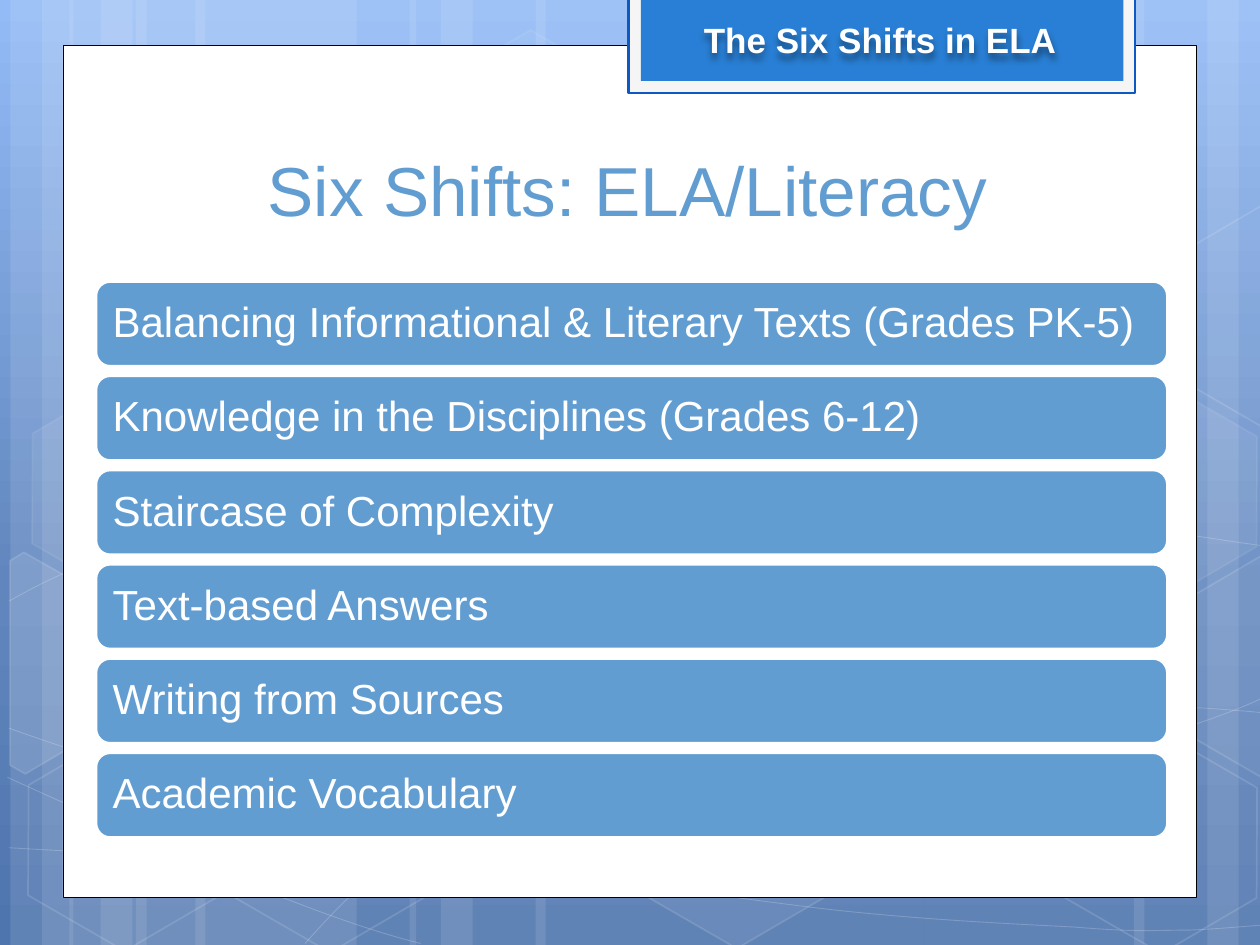
from copy import deepcopy
from dataclasses import dataclass
from math import cos, radians, sin
from typing import NamedTuple, Optional

from pptx import Presentation
from pptx.dml.color import RGBColor as Rgb
from pptx.enum.shapes import MSO_SHAPE as Preset
from pptx.enum.text import MSO_ANCHOR as Anchor, PP_ALIGN as Align
from pptx.oxml import parse_xml
from pptx.oxml.ns import nsdecls, qn
from pptx.util import Cm, Pt


@dataclass(frozen=True)
class Theme:
    font: str = "Arial"
    white: str = "FFFFFF"
    black: str = "000000"
    accent: str = "629DD1"
    tab_border: str = "0E58C4"
    tab_frame: str = "F5F5F5"
    tab: str = "297FD5"
    sky: tuple = ((0, "93BBF6"), (0.62, "6186BE"), (1, "4F75AE"))
    title_size: float = 39.6
    row_size: float = 24
    tab_size: float = 20


class Box(NamedTuple):
    left: float
    top: float
    width: float
    height: float


class Paint(NamedTuple):
    fill: Optional[str] = None
    fill_alpha: int = 100
    line: Optional[str] = None
    line_width: float = 1
    line_alpha: int = 100


class Stripe(NamedTuple):
    left: float
    width: float


class Hexagon(NamedTuple):
    left: float
    top: float
    fill_alpha: int
    line_alpha: int


class Polygon(NamedTuple):
    center: tuple
    points: list
    fill_alpha: int


THEME = Theme()
PAGE_WIDTH, PAGE_HEIGHT = 25.4, 19.05
HEXAGON_WIDTH, HEXAGON_HEIGHT = 4.45, 3.86
TILT = 30
ROW_TOP, ROW_PITCH = 5.68, 1.9

WIDE, NARROW, MEDIUM = 4.45, 1.27, 2.11
STRIPES = [
    Stripe(2.74, WIDE), Stripe(0.21, NARROW), Stripe(0.85, MEDIUM),
    Stripe(3.94, WIDE), Stripe(1.4, NARROW), Stripe(2.03, MEDIUM),
    Stripe(18.62, WIDE), Stripe(24.34, NARROW), Stripe(22.86, MEDIUM),
    Stripe(10.8, 7.82), Stripe(8.26, NARROW), Stripe(8.89, MEDIUM),
]
CURVES = [
    [(0.18, 17.09), (1.55, 17.17), (2.92, 17.25), (4.83, 17.22), (6.73, 17.2),
     (9.09, 17.15), (11.63, 16.89), (14.17, 16.64), (17.78, 16.15), (20.12, 15.67),
     (22.43, 15.19), (24.82, 14.43), (25.58, 14)],
    [(0.18, 12.12), (0.91, 11.71), (1.65, 11.33), (3.07, 10.95), (4.52, 10.57),
     (6.58, 10.01), (8.81, 9.83), (11.07, 9.65), (13.82, 9.63), (16.61, 9.83),
     (19.41, 10.03), (24.05, 10.82), (25.58, 11.02)],
    [(0.15, 15.67), (3.23, 17.07), (6.27, 18.47), (8.48, 19.02)],
    [(0.18, 14.68), (0.97, 14.96), (1.78, 15.24), (3.25, 15.65), (4.72, 16.03),
     (6.93, 16.66), (9.07, 17.09), (11.18, 17.53), (13.84, 17.98), (15.95, 18.24),
     (18.06, 18.52), (20.32, 18.62), (21.67, 18.69), (22.99, 18.8), (23.34, 18.75),
     (24, 18.75), (24.66, 18.72), (25.12, 18.67), (25.58, 18.64)],
    [(6.15, 19.02), (6.6, 18.52), (7.06, 18.01), (7.67, 17.55), (8.28, 17.09),
     (9.14, 16.59), (9.86, 16.23), (10.57, 15.88), (11, 15.72), (11.94, 15.47),
     (12.85, 15.21), (14.55, 14.86), (15.44, 14.68), (16.36, 14.5), (16.48, 14.5),
     (17.27, 14.45), (18.06, 14.38), (19.3, 14.3), (20.17, 14.27), (21.06, 14.25),
     (22.5, 14.27), (22.5, 14.27), (22.5, 14.27), (24.21, 14.27), (24.21, 14.27),
     (24.66, 14.3), (25.32, 14.35), (25.55, 14.38)],
]
HEXAGONS = [
    Hexagon(8.48, 0.91, 4, 8), Hexagon(12.62, 14.96, 6, 12),
    Hexagon(0.28, 15.01, 0, 12), Hexagon(0.36, 7.92, 7, 8),
    Hexagon(4.42, 15.04, 0, 12), Hexagon(19.13, 11.51, 10, 12),
    Hexagon(21.18, 15.06, 0, 12), Hexagon(21.18, 7.98, 7, 8),
]
POLYGONS = [
    Polygon((0.91, 13.59), [(0.2, 11.3), (0.48, 11.13), (2.44, 12.24), (2.41, 14.48),
                            (0.51, 15.6), (0.2, 15.42)], 10),
    Polygon((25.02, 13.21), [(23.52, 12.32), (25.43, 11.2), (25.63, 11.33), (25.63, 15.57),
                             (25.45, 15.67), (23.52, 14.55)], 4),
    Polygon((25.02, 6.12), [(23.52, 5.26), (25.43, 4.14), (25.65, 4.27), (25.63, 8.51),
                            (25.45, 8.61), (23.52, 7.49)], 0),
]
SHIFTS = [
    "Balancing Informational & Literary Texts (Grades PK-5)",
    "Knowledge in the Disciplines (Grades 6-12)",
    "Staircase of Complexity",
    "Text-based Answers",
    "Writing from Sources",
    "Academic Vocabulary",
]


def set_solid(fill, color: str, alpha: int) -> None:
    fill.solid()
    fill.fore_color.rgb = Rgb.from_string(color)
    if alpha < 100:
        node = fill._xPr.find(qn("a:solidFill"))[0]
        node.append(parse_xml(f'<a:alpha {nsdecls("a")} val="{alpha * 1000}"/>'))


def apply_paint(shape, paint: Paint) -> None:
    shape.shadow.inherit = False
    if paint.fill and paint.fill_alpha:
        set_solid(shape.fill, paint.fill, paint.fill_alpha)
    else:
        shape.fill.background()
    if paint.line:
        shape.line.width = Pt(paint.line_width)
        set_solid(shape.line.fill, paint.line, paint.line_alpha)
    else:
        shape.line.fill.background()


def draw_preset(page, preset, box: Box, paint: Paint):
    shape = page.shapes.add_shape(preset, *map(Cm, box))
    apply_paint(shape, paint)
    return shape


def draw_outline(page, points: list, paint: Paint, close: bool):
    start, *rest = [(Cm(x), Cm(y)) for x, y in points]
    builder = page.shapes.build_freeform(*start)
    builder.add_line_segments(rest, close=close)
    shape = builder.convert_to_shape()
    apply_paint(shape, paint)
    return shape


def draw_curve(page, controls: list) -> None:
    shape = draw_outline(page, controls, Paint(None, 0, THEME.white, 0.5, 20), False)
    lines = list(shape.element.iter(qn("a:lnTo")))
    for first in range(0, len(lines), 3):
        curve = parse_xml(f'<a:cubicBezTo {nsdecls("a")}/>')
        lines[first].addprevious(curve)
        for line in lines[first:first + 3]:
            curve.append(line[0])
            line.getparent().remove(line)


def draw_polygon(page, polygon: Polygon) -> None:
    (center_x, center_y), angle = polygon.center, radians(TILT)
    offsets = [(x - center_x, y - center_y) for x, y in polygon.points]
    upright = [(center_x + x * cos(angle) + y * sin(angle),
                center_y - x * sin(angle) + y * cos(angle)) for x, y in offsets]
    paint = Paint(THEME.white, polygon.fill_alpha, THEME.white, 1, 12)
    draw_outline(page, upright, paint, True).rotation = TILT


def write_text(shape, text: str, size: float, color: str, align, anchor, bold: bool = False):
    frame = shape.text_frame
    frame.word_wrap = True
    frame.vertical_anchor = anchor
    frame.text = text
    para = frame.paragraphs[0]
    para.alignment = align
    span = para.runs[0]
    span.font.name, span.font.size, span.font.bold = THEME.font, Pt(size), bold
    span.font.color.rgb = Rgb.from_string(color)
    return para


def draw_sky(page) -> None:
    fill = page.background.fill
    fill.gradient()
    fill.gradient_angle = 270
    stops = page.element.find(".//" + qn("a:gsLst"))
    stops.append(deepcopy(stops[-1]))
    for stop, (position, color) in zip(fill.gradient_stops, THEME.sky):
        stop.position = position
        stop.color.rgb = Rgb.from_string(color)


def draw_backdrop(page) -> None:
    white = THEME.white
    for stripe in STRIPES:
        draw_preset(page, Preset.RECTANGLE, Box(stripe.left, 0, stripe.width, PAGE_HEIGHT),
                    Paint(white, 10))
    for curve in CURVES:
        draw_curve(page, curve)
    for item in HEXAGONS:
        shape = draw_preset(page, Preset.HEXAGON,
                            Box(item.left, item.top, HEXAGON_WIDTH, HEXAGON_HEIGHT),
                            Paint(white, item.fill_alpha, white, 1, item.line_alpha))
        shape.adjustments[0] = 0.285
        shape.rotation = TILT
    for polygon in POLYGONS:
        draw_polygon(page, polygon)


def draw_row(page, index: int, text: str) -> None:
    row = draw_preset(page, Preset.ROUNDED_RECTANGLE,
                      Box(1.94, ROW_TOP + index * ROW_PITCH, 21.59, 1.7),
                      Paint(THEME.accent, line=THEME.white, line_width=1.25))
    para = write_text(row, text, THEME.row_size, THEME.white, Align.LEFT, Anchor.MIDDLE)
    para.line_spacing = 0.9


def draw_tab(page) -> None:
    draw_preset(page, Preset.RECTANGLE, Box(12.67, -0.05, 10.21, 1.93),
                Paint(THEME.tab_frame, line=THEME.tab_border, line_width=1.25))
    draw_preset(page, Preset.RECTANGLE, Box(12.92, -0.1, 9.73, 1.73), Paint(THEME.tab))
    label = page.shapes.add_textbox(*map(Cm, (13.16, 0.25, 9.17, 1.12)))
    write_text(label, "The Six Shifts in ELA", THEME.tab_size, THEME.white,
               Align.CENTER, Anchor.TOP, True)
    label.element.spPr.append(parse_xml(
        f'<a:effectLst {nsdecls("a")}><a:outerShdw blurRad="50800" dist="38100" dir="5400000">'
        f'<a:srgbClr val="{THEME.black}"><a:alpha val="40000"/></a:srgbClr>'
        '</a:outerShdw></a:effectLst>'))


def main() -> None:
    deck = Presentation()
    deck.slide_width, deck.slide_height = Cm(PAGE_WIDTH), Cm(PAGE_HEIGHT)
    page = deck.slides.add_slide(deck.slide_layouts[6])
    draw_sky(page)
    draw_backdrop(page)
    draw_preset(page, Preset.RECTANGLE, Box(1.27, 0.91, 22.86, 17.19),
                Paint(THEME.white, line=THEME.black, line_width=0.5))
    draw_tab(page)
    for index, text in enumerate(SHIFTS):
        draw_row(page, index, text)
    title = page.shapes.add_textbox(*map(Cm, (2.9, 2.84, 19.51, 1.93)))
    write_text(title, "Six Shifts: ELA/Literacy", THEME.title_size, THEME.accent,
               Align.CENTER, Anchor.BOTTOM)
    deck.save("out.pptx")


if __name__ == "__main__":
    main()
